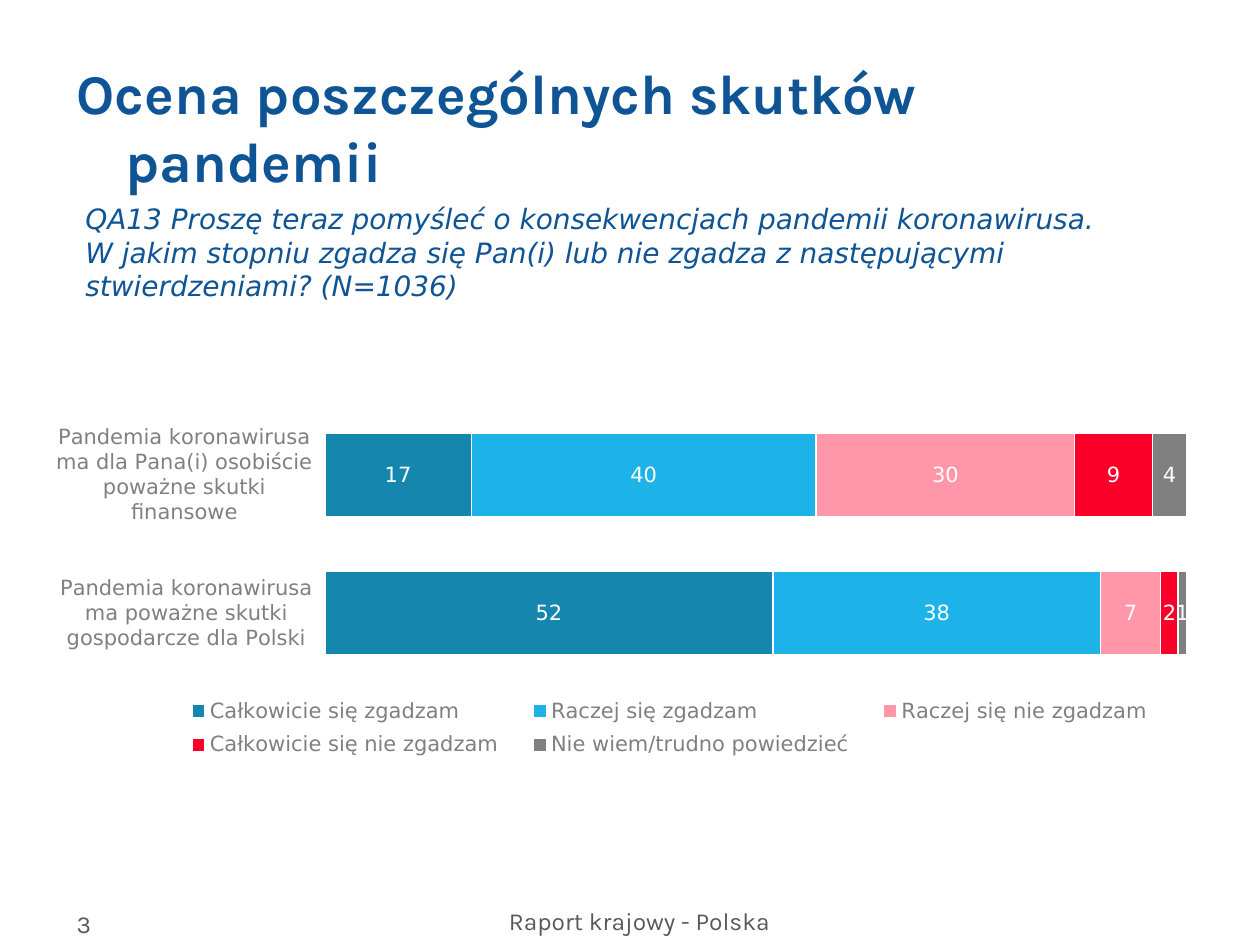
from typing import NamedTuple

from lxml import etree
from pptx import Presentation
from pptx.chart.data import CategoryChartData
from pptx.dml.color import RGBColor
from pptx.enum import chart as ch, text as tx
from pptx.oxml import ns
from pptx.util import Inches, Pt

NAVY = RGBColor(0x0F, 0x54, 0x94)
DARK_GREY = RGBColor(0x59, 0x59, 0x59)
GREY = RGBColor(0x80, 0x80, 0x80)
WHITE = RGBColor(0xFF, 0xFF, 0xFF)
TEAL = RGBColor(0x15, 0x86, 0xAE)
SKY = RGBColor(0x1D, 0xB3, 0xE8)
PINK = RGBColor(0xFF, 0x97, 0xA8)
RED = RGBColor(0xFA, 0x00, 0x28)

HEADING_FONT = "Karla"
BODY_FONT = "DejaVu Sans"


class Box(NamedTuple):
    left: float
    top: float
    width: float
    height: float


class Caption(NamedTuple):
    wording: str
    box: Box
    size: float
    color: RGBColor
    font: str = HEADING_FONT
    bold: bool = False
    italic: bool = False
    anchor: tx.MSO_ANCHOR = tx.MSO_ANCHOR.TOP
    align: tx.PP_ALIGN = tx.PP_ALIGN.LEFT
    hanging: float = 0


class Answer(NamedTuple):
    name: str
    percents: tuple[int, int]
    color: RGBColor


CAPTIONS = [
    Caption("Ocena poszczególnych skutków pandemii", Box(0.51, 0.49, 9, 1.02), 32, NAVY,
            bold=True, anchor=tx.MSO_ANCHOR.MIDDLE, hanging=0.39),
    Caption("QA13 Proszę teraz pomyśleć o konsekwencjach pandemii koronawirusa.\v"
            "W jakim stopniu zgadza się Pan(i) lub nie zgadza z następującymi "
            "stwierdzeniami? (N=1036)",
            Box(0.58, 1.55, 9, 1), 16, NAVY, font=BODY_FONT, italic=True),
    Caption("Raport krajowy - Polska", Box(3.49, 7.14, 3.17, 0.35), 14, DARK_GREY,
            align=tx.PP_ALIGN.CENTER),
    Caption("3", Box(0.51, 6.98, 2.33, 0.52), 14, DARK_GREY, anchor=tx.MSO_ANCHOR.BOTTOM),
]

STATEMENTS = [
    "Pandemia koronawirusa ma dla Pana(i) osobiście poważne skutki finansowe",
    "Pandemia koronawirusa ma poważne skutki gospodarcze dla Polski",
]
ANSWERS = [
    Answer("Całkowicie się zgadzam", (17, 52), TEAL),
    Answer("Raczej się zgadzam", (40, 38), SKY),
    Answer("Raczej się nie zgadzam", (30, 7), PINK),
    Answer("Całkowicie się nie zgadzam", (9, 2), RED),
    Answer("Nie wiem/trudno powiedzieć", (4, 1), GREY),
]
CHART_BOX = Box(0.39, 3.1, 9.12, 3.01)
PLOT_SHARE = Box(0.24, 0.04, 0.75, 0.73)
LEGEND_SHARE = Box(0.1, 0.79, 0.88, 0.2)


def inches(box: Box) -> list[int]:
    return [Inches(length) for length in box]


def add_caption(slide, caption: Caption) -> None:
    frame = slide.shapes.add_textbox(*inches(caption.box)).text_frame
    frame.word_wrap = True
    frame.vertical_anchor = caption.anchor
    paragraph = frame.paragraphs[0]
    paragraph.text = caption.wording
    paragraph.alignment = caption.align
    if caption.hanging:
        properties = paragraph._p.get_or_add_pPr()
        properties.set("marL", str(Inches(caption.hanging)))
        properties.set("indent", str(-Inches(caption.hanging)))
    font = paragraph.font
    font.name, font.size = caption.font, Pt(caption.size)
    font.bold, font.italic = caption.bold, caption.italic
    font.color.rgb = caption.color


def manual_layout(share: Box, inner: bool = False):
    """Return a c:layout element placing a part by shares of the chart area."""
    layout = etree.Element(ns.qn("c:layout"))
    manual = etree.SubElement(layout, ns.qn("c:manualLayout"))
    settings = [("layoutTarget", "inner")] if inner else []
    settings += [("xMode", "edge"), ("yMode", "edge")]
    settings += zip("xywh", share)
    for tag, value in settings:
        etree.SubElement(manual, ns.qn(f"c:{tag}")).set("val", str(value))
    return layout


def style_series(series, color: RGBColor) -> None:
    series.format.fill.solid()
    series.format.fill.fore_color.rgb = color
    series.format.line.color.rgb = WHITE
    series.format.line.width = Pt(0.75)
    labels = series.data_labels
    labels.show_value = True
    labels.position = ch.XL_LABEL_POSITION.CENTER
    labels.font.size = Pt(12)
    labels.font.color.rgb = WHITE


def add_opinion_chart(slide) -> None:
    data = CategoryChartData()
    data.categories = STATEMENTS
    for answer in ANSWERS:
        data.add_series(answer.name, answer.percents)
    chart = slide.shapes.add_chart(
        ch.XL_CHART_TYPE.BAR_STACKED_100, *inches(CHART_BOX), data).chart
    chart.has_title = False
    chart.font.name, chart.font.size = BODY_FONT, Pt(12)
    chart.font.color.rgb = GREY

    bars = chart.plots[0]
    bars.gap_width, bars.overlap = 66, 100
    bars.vary_by_categories = False
    for series, answer in zip(bars.series, ANSWERS):
        style_series(series, answer.color)

    statements = chart.category_axis
    statements.reverse_order = True
    statements.format.line.fill.background()
    statements.tick_labels.font.size = Pt(12)
    statements.tick_labels.font.color.rgb = GREY
    chart.value_axis.has_major_gridlines = False
    chart.value_axis.visible = False

    chart.has_legend = True
    legend = chart.legend
    legend.position = ch.XL_LEGEND_POSITION.TOP
    legend.include_in_layout = False
    legend.font.size = Pt(12)
    legend.font.color.rgb = GREY

    plot_area = chart._chartSpace.chart.plotArea
    for old in plot_area.findall(ns.qn("c:layout")):
        plot_area.remove(old)
    plot_area.insert(0, manual_layout(PLOT_SHARE, inner=True))
    legend_xml = legend._element
    for old in legend_xml.findall(ns.qn("c:layout")):
        legend_xml.remove(old)
    legend_xml.find(ns.qn("c:legendPos")).addnext(manual_layout(LEGEND_SHARE))


def main() -> None:
    deck = Presentation()
    deck.slide_width, deck.slide_height = Inches(10), Inches(7.5)
    slide = deck.slides.add_slide(deck.slide_layouts[6])
    for caption in CAPTIONS:
        add_caption(slide, caption)
    add_opinion_chart(slide)
    deck.save("out.pptx")


if __name__ == "__main__":
    main()
